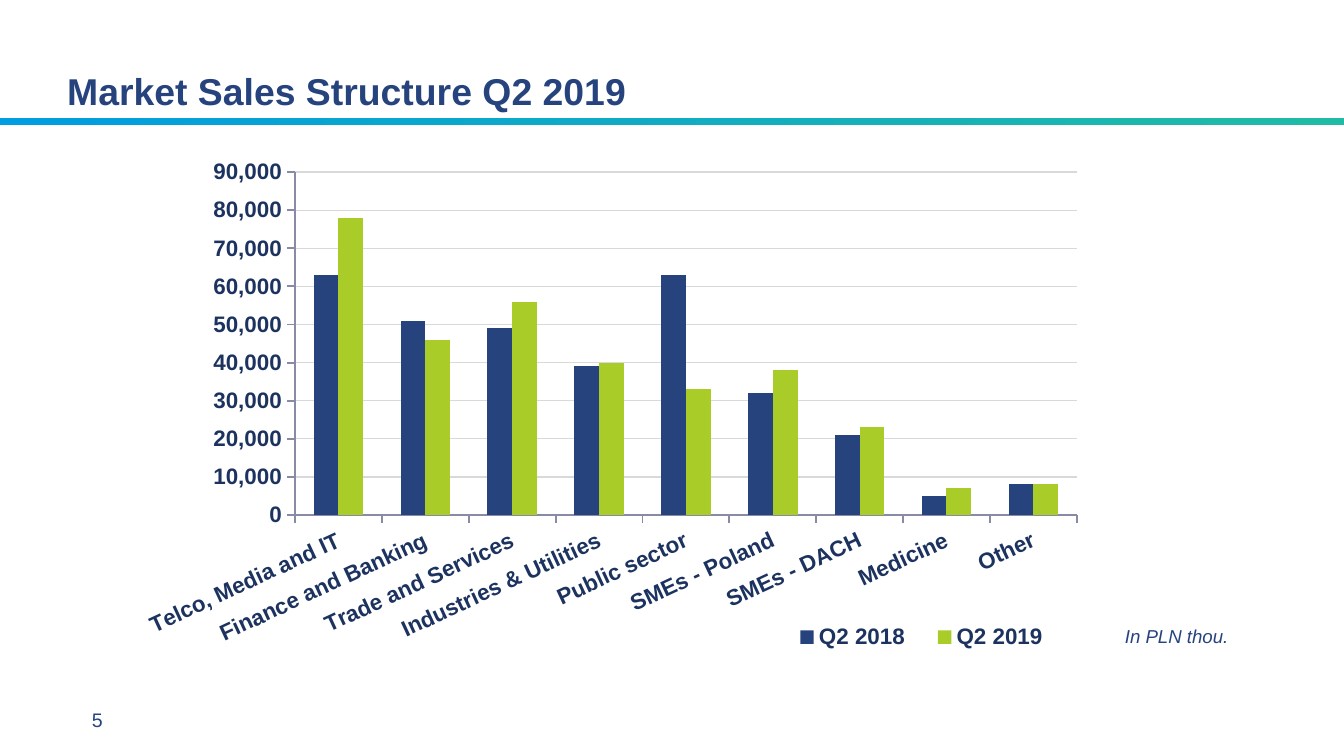
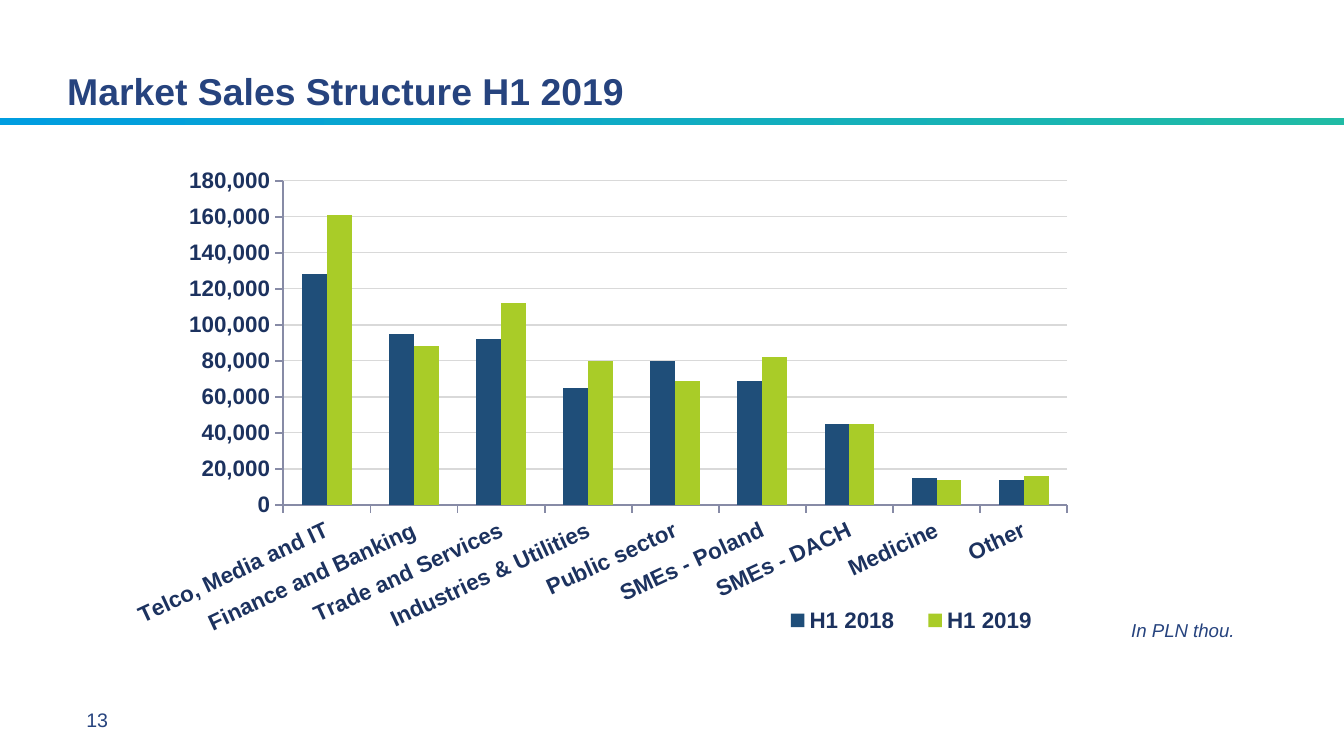
from dataclasses import dataclass

from lxml import etree
from pptx import Presentation
from pptx import util as u
from pptx.chart.data import CategoryChartData
from pptx.dml.color import RGBColor
from pptx.enum import chart as ch, shapes, text
from pptx.oxml import ns

# Content; chart values in thousands
SECTORS = ["Telco, Media and IT", "Finance and Banking", "Trade and Services",
           "Industries & Utilities", "Public sector", "SMEs - Poland",
           "SMEs - DACH", "Medicine", "Other"]
NOTE = "In PLN thou."
SLIDES = [
    {"title": "Market Sales Structure Q2 2019", "page": "5",
     "chart": (2.64, 2.57, 18.47, 10.08), "note": (21.11, 11.73, 2.26, 0.58),
     "top": 90, "step": 10,
     "series": [("Q2 2018", "26437E", (63, 51, 49, 39, 63, 32, 21, 5, 8)),
                ("Q2 2019", "A9CC28", (78, 46, 56, 40, 33, 38, 23, 7, 8))]},
    {"title": "Market Sales Structure H1 2019", "page": "13",
     "chart": (2.41, 2.77, 18.52, 9.53), "note": (21.23, 11.61, 2.26, 0.58),
     "top": 180, "step": 20,
     "series": [("H1 2018", "1F4E79", (128, 95, 92, 65, 80, 69, 45, 15, 14)),
                ("H1 2019", "A9CC28", (161, 88, 112, 80, 69, 82, 45, 14, 16))]},
]


# Shared look
@dataclass(frozen=True)
class Theme:
    font: str = "Arial"
    navy: str = "26437E"
    label: str = "1C325F"
    axis: str = "878BA6"
    grid: str = "D9D9D9"
    band: tuple = ("009DE0", "20BBA5")
    title_size: float = 20
    page_size: float = 10.5
    note_size: float = 10
    chart_size: float = 12


T = Theme()
SLIDE_SIZE = (25.4, 14.29)
BAND = (0, 2.24, SLIDE_SIZE[0], 0.13)
TITLE = (1.27, 0.33, 22.89, 1.93)
PAGE = (1.27, 13.23, 1.14, 0.76)
PLOT = (0.159, 0.068, 0.8, 0.643)
LEGEND = (0.65, 0.9, 0.3, 0.08)
LABEL_ANGLE = -25


def cm(box):
    return [u.Cm(v) for v in box]


def rgb(value):
    return RGBColor.from_string(value)


def style(font, size, color, bold=False, italic=False):
    font.name, font.size = T.font, u.Pt(size)
    font.bold, font.italic = bold, italic
    font.color.rgb = rgb(color)


def write(sp, words, size, margins, anchor, align=text.PP_ALIGN.LEFT, wrap=True, **look):
    tf = sp.text_frame
    tf.word_wrap = wrap
    tf.auto_size = text.MSO_AUTO_SIZE.NONE if wrap else text.MSO_AUTO_SIZE.SHAPE_TO_FIT_TEXT
    tf.vertical_anchor = anchor
    tf.margin_left = tf.margin_right = u.Cm(margins[0])
    tf.margin_top = tf.margin_bottom = u.Cm(margins[1])
    p = tf.paragraphs[0]
    p.text, p.alignment = words, align
    style(p.font, size, T.navy, **look)


def set_layout(parent, box, inner=False):
    """Place a plot area or legend by fractions of the chart."""
    for old in parent.findall(ns.qn("c:layout")):
        parent.remove(old)
    layout = etree.Element(ns.qn("c:layout"))
    manual = etree.SubElement(layout, ns.qn("c:manualLayout"))
    values = [("layoutTarget", "inner")] if inner else []
    values += [("xMode", "edge"), ("yMode", "edge"), *zip("xywh", box)]
    for tag, value in values:
        etree.SubElement(manual, ns.qn("c:" + tag)).set("val", str(value))
    position = parent.find(ns.qn("c:legendPos"))
    if position is None:
        parent.insert(0, layout)
    else:
        position.addnext(layout)


def style_axis(axis):
    style(axis.tick_labels.font, T.chart_size, T.label, bold=True)
    axis.major_tick_mark = ch.XL_TICK_MARK.OUTSIDE
    axis.minor_tick_mark = ch.XL_TICK_MARK.NONE
    axis.format.line.color.rgb = rgb(T.axis)
    axis.format.line.width = u.Pt(1)


def add_sales_chart(s, item):
    data = CategoryChartData(number_format="#,##0")
    data.categories = SECTORS
    for name, _, values in item["series"]:
        data.add_series(name, [v * 1000 for v in values])
    chart = s.shapes.add_chart(ch.XL_CHART_TYPE.COLUMN_CLUSTERED,
                               *cm(item["chart"]), data).chart
    style(chart.font, T.note_size, T.navy)
    chart.has_title = False

    # Columns
    plot = chart.plots[0]
    plot.gap_width, plot.overlap, plot.vary_by_categories = 150, 0, False
    for series, (_, color, _) in zip(plot.series, item["series"]):
        series.format.fill.solid()
        series.format.fill.fore_color.rgb = rgb(color)
        series.invert_if_negative = False

    # Axes
    cats, vals = chart.category_axis, chart.value_axis
    style_axis(cats)
    style_axis(vals)
    cats.tick_label_position = ch.XL_TICK_LABEL_POSITION.LOW
    body = cats._element.find(ns.qn("c:txPr")).find(ns.qn("a:bodyPr"))
    body.set("rot", str(LABEL_ANGLE * 60000))
    body.set("vert", "horz")
    vals.minimum_scale, vals.maximum_scale = 0, item["top"] * 1000
    vals.major_unit = item["step"] * 1000
    vals.tick_labels.number_format = "#,##0"
    vals.tick_labels.number_format_is_linked = False
    vals.has_major_gridlines = True
    vals.major_gridlines.format.line.color.rgb = rgb(T.grid)
    vals.major_gridlines.format.line.width = u.Pt(0.75)

    # Legend and plot position
    chart.has_legend = True
    chart.legend.position = ch.XL_LEGEND_POSITION.RIGHT
    chart.legend.include_in_layout = False
    style(chart.legend.font, T.chart_size, T.label, bold=True)
    set_layout(chart.legend._element, LEGEND)
    set_layout(chart._chartSpace.chart.plotArea, PLOT, inner=True)


def add_band(s):
    sp = s.shapes.add_shape(shapes.MSO_SHAPE.RECTANGLE, *cm(BAND))
    sp.shadow.inherit = False
    sp.line.fill.background()
    sp.fill.gradient()
    sp.fill.gradient_angle = 0
    for stop, color, place in zip(sp.fill.gradient_stops, T.band, (0, 1)):
        stop.color.rgb, stop.position = rgb(color), place


def add_sales_slide(prs, item):
    s = prs.slides.add_slide(prs.slide_layouts[5])
    add_band(s)
    title = s.shapes.title
    title.left, title.top, title.width, title.height = cm(TITLE)
    write(title, item["title"], T.title_size, (0, 0.13), text.MSO_ANCHOR.BOTTOM, bold=True)
    write(s.shapes.add_textbox(*cm(PAGE)), item["page"], T.page_size, (0.25, 0.13),
          text.MSO_ANCHOR.MIDDLE, text.PP_ALIGN.CENTER)
    write(s.shapes.add_textbox(*cm(item["note"])), NOTE, T.note_size, (0.15, 0.08),
          text.MSO_ANCHOR.TOP, wrap=False, italic=True)
    add_sales_chart(s, item)


def main():
    prs = Presentation()
    prs.slide_width, prs.slide_height = cm(SLIDE_SIZE)
    for item in SLIDES:
        add_sales_slide(prs, item)
    prs.save("out.pptx")


if __name__ == "__main__":
    main()
